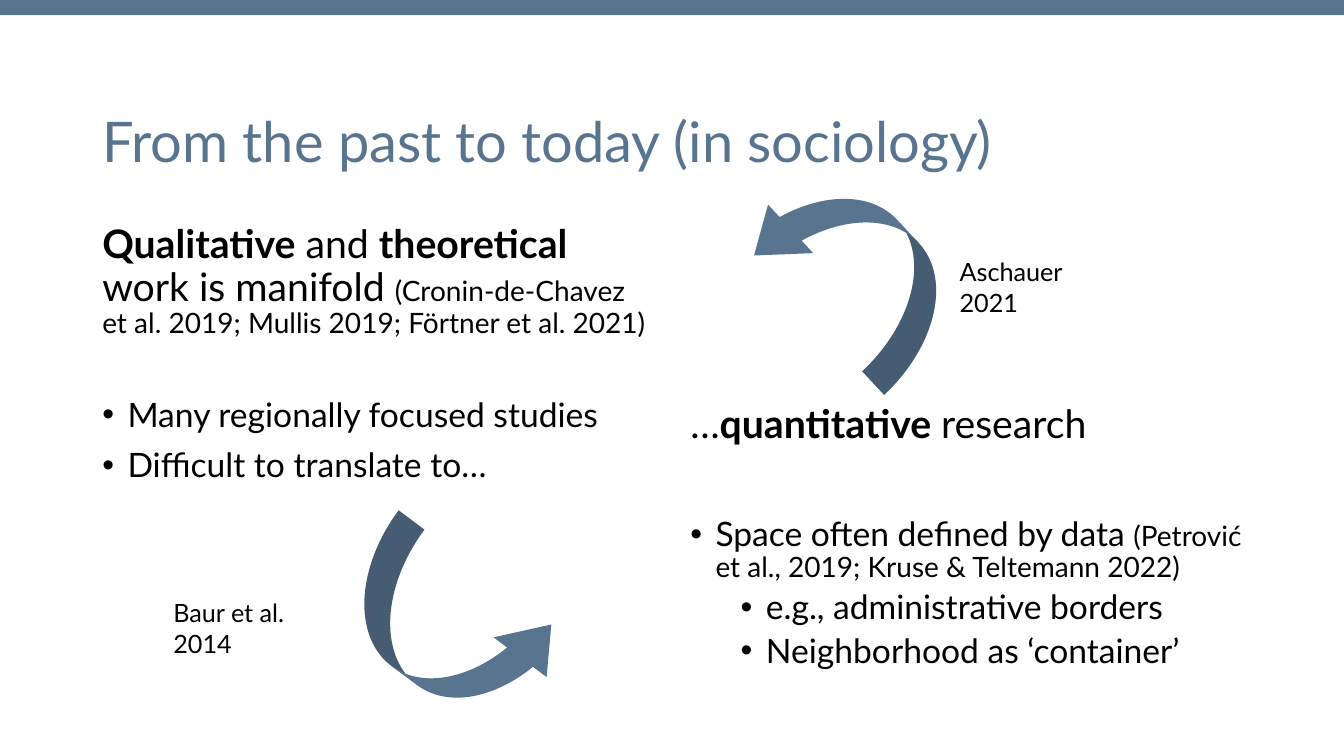
from dataclasses import dataclass
from typing import Optional

from lxml.etree import SubElement
from pptx import Presentation
from pptx.dml.color import RGBColor
from pptx.enum.shapes import MSO_SHAPE as Preset
from pptx.enum.text import MSO_ANCHOR as Anchor, MSO_AUTO_SIZE as AutoSize
from pptx.oxml.ns import qn
from pptx.util import Emu, Inches, Pt

COLORS = {"steel": "58748F", "text": "000000"}
FONT = "Lato"
WIDTH, HEIGHT = Inches(13.33), Inches(7.5)
COLUMNS, ROWS = 160, 100
MARGIN, HALF = 11, 68
BULLET_INDENTS = (0.25, 0.75)
HANGING = 0.25


@dataclass(frozen=True)
class Area:
    col: float
    row: float
    cols: float
    rows: float

    def box(self) -> tuple[Emu, Emu, Emu, Emu]:
        return (
            Emu(round(self.col * WIDTH / COLUMNS)),
            Emu(round(self.row * HEIGHT / ROWS)),
            Emu(round(self.cols * WIDTH / COLUMNS)),
            Emu(round(self.rows * HEIGHT / ROWS)),
        )


@dataclass(frozen=True)
class Words:
    text: str
    size: float
    bold: bool = False
    color: str = "text"


@dataclass(frozen=True)
class Line:
    words: tuple[Words, ...]
    before: float = 0
    level: Optional[int] = None
    spacing: float = 0.9


@dataclass(frozen=True)
class Passage:
    area: Area
    lines: tuple[Line, ...]
    anchor: Anchor = Anchor.TOP
    grows: bool = False


@dataclass(frozen=True)
class Swoosh:
    area: Area
    rotation: float


def add_filled(slide, preset: Preset, area: Area):
    shape = slide.shapes.add_shape(preset, *area.box())
    shape.shadow.inherit = False
    shape.fill.solid()
    shape.fill.fore_color.rgb = RGBColor.from_string(COLORS["steel"])
    shape.line.fill.background()
    return shape


def add_swoosh(slide, swoosh: Swoosh) -> None:
    arrow = add_filled(slide, Preset.CURVED_RIGHT_ARROW, swoosh.area)
    for index, share in enumerate((0.25, 0.514, 0.348)):
        arrow.adjustments[index] = share
    arrow.rotation = swoosh.rotation


def add_bullet(paragraph, level: int) -> None:
    properties = paragraph._p.get_or_add_pPr()
    properties.set("marL", str(Inches(BULLET_INDENTS[level])))
    properties.set("indent", str(-Inches(HANGING)))
    SubElement(properties, qn("a:buFont")).set("typeface", "Arial")
    SubElement(properties, qn("a:buChar")).set("char", "•")
    paragraph.level = level


def write_line(paragraph, line: Line) -> None:
    if line.level is not None:
        add_bullet(paragraph, line.level)
    paragraph.line_spacing = line.spacing
    paragraph.space_before = Pt(line.before)
    for words in line.words:
        run = paragraph.add_run()
        run.text = words.text
        run.font.name = FONT
        run.font.size = Pt(words.size)
        run.font.bold = words.bold
        run.font.color.rgb = RGBColor.from_string(COLORS[words.color])


def add_passage(slide, passage: Passage) -> None:
    frame = slide.shapes.add_textbox(*passage.area.box()).text_frame
    frame.word_wrap = True
    frame.auto_size = AutoSize.SHAPE_TO_FIT_TEXT if passage.grows else AutoSize.NONE
    frame.vertical_anchor = passage.anchor
    for index, line in enumerate(passage.lines):
        paragraph = frame.add_paragraph() if index else frame.paragraphs[0]
        write_line(paragraph, line)


def citation(area: Area, text: str) -> Passage:
    return Passage(area, (Line((Words(text, 18),), spacing=1.0),), grows=True)


HEADING = Passage(
    Area(MARGIN, 13.6, 138, 11.1),
    (Line((Words("From the past to today (in sociology)", 40, color="steel"),)),),
    anchor=Anchor.MIDDLE,
)
QUALITATIVE = Passage(
    Area(MARGIN, 29.1, HALF, 60.9),
    (
        Line((
            Words("Qualitative", 28, bold=True),
            Words(" and ", 28),
            Words("theoretical", 28, bold=True),
            Words(" work is manifold ", 28),
            Words("(Cronin-de-Chavez et al. 2019; Mullis 2019; Förtner et al. 2021)", 20),
        )),
        Line((Words("Many regionally focused studies", 24),), before=41.6, level=0),
        Line((Words("Difficult to translate to…", 24),), before=10, level=0),
    ),
)
QUANTITATIVE = Passage(
    Area(MARGIN + HALF + 2, 52.9, HALF, 37.1),
    (
        Line((
            Words("…", 28),
            Words("quantitative", 28, bold=True),
            Words(" research", 28),
        )),
        Line((
            Words("Space often defined by data ", 24),
            Words("(Petrović et al., 2019; Kruse & Teltemann 2022)", 20),
        ), before=50.2, level=0),
        Line((Words("e.g., administrative borders", 24),), before=5, level=1),
        Line((Words("Neighborhood as ‘container’", 24),), before=5, level=1),
    ),
)
SWOOSHES = (
    Swoosh(Area(45.85, 68.4, 15.36, 29.6), 306.8),
    Swoosh(Area(94.1, 20.8, 15.36, 29.6), 137),
)
CITATIONS = (
    citation(Area(113.05, 33.3, 20.75, 9.5), "Aschauer 2021"),
    citation(Area(19.45, 78.4, 21.95, 9.5), "Baur et al. 2014"),
)


def main() -> None:
    deck = Presentation()
    deck.slide_width, deck.slide_height = WIDTH, HEIGHT
    slide = deck.slides.add_slide(deck.slide_layouts[6])
    add_filled(slide, Preset.RECTANGLE, Area(0, 0, COLUMNS, 2))
    for passage in (HEADING, QUALITATIVE, QUANTITATIVE):
        add_passage(slide, passage)
    for swoosh in SWOOSHES:
        add_swoosh(slide, swoosh)
    for passage in CITATIONS:
        add_passage(slide, passage)
    deck.save("out.pptx")


if __name__ == "__main__":
    main()
